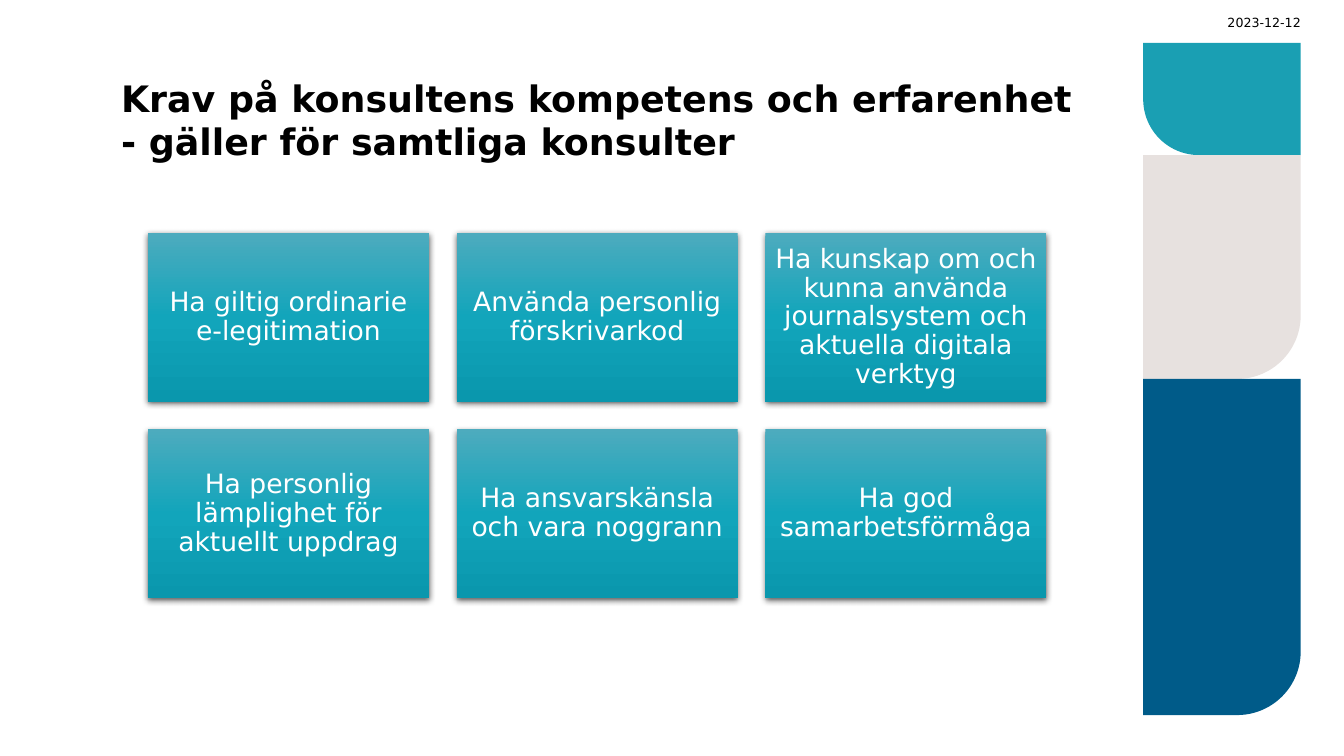
from math import cos, pi, sin

from pptx import Presentation
from pptx.dml.color import RGBColor
from pptx.enum.shapes import MSO_SHAPE
from pptx.enum.text import MSO_ANCHOR, MSO_AUTO_SIZE, PP_ALIGN
from pptx.oxml import parse_xml
from pptx.oxml.ns import nsdecls, qn
from pptx.util import Cm, Pt

FONT = "DejaVu Sans"
BLACK = RGBColor(0x00, 0x00, 0x00)
WHITE = RGBColor(0xFF, 0xFF, 0xFF)
TEAL = RGBColor(0x1A, 0x9F, 0xB3)
SAND = RGBColor(0xE7, 0xE1, 0xDF)
NAVY = RGBColor(0x00, 0x5B, 0x89)
GRADIENT = [
    (0, RGBColor(0x4D, 0xAB, 0xBE)),
    (50000, RGBColor(0x12, 0xA5, 0xBB)),
    (100000, RGBColor(0x0A, 0x97, 0xAD)),
]


def write(frame, text, size, color, align, anchor, inset=0):
    """Fill a text frame with one formatted paragraph."""
    frame.word_wrap = True
    frame.auto_size = MSO_AUTO_SIZE.NONE
    frame.vertical_anchor = anchor
    frame.margin_left = frame.margin_right = Cm(inset)
    frame.margin_top = frame.margin_bottom = Cm(inset)
    frame.text = text
    paragraph = frame.paragraphs[0]
    paragraph.alignment = align
    paragraph.font.name = FONT
    paragraph.font.size = Pt(size)
    paragraph.font.color.rgb = color
    return paragraph


prs = Presentation()
prs.slide_width, prs.slide_height = Cm(33.87), Cm(19.05)
slide = prs.slides.add_slide(prs.slide_layouts[5])
shapes = slide.shapes

# Side panels, each with one rounded bottom corner
panel_left, panel_right = 28.81, 32.78
panels = [
    (1.08, 3.91, 1.41, "left", TEAL),
    (3.91, 9.55, 1.6, "right", SAND),
    (9.55, 18.02, 1.6, "right", NAVY),
]
arc_steps = 24
for top, bottom, radius, rounded_side, color in panels:
    if rounded_side == "right":
        rounded, square, inward = panel_right, panel_left, -1
    else:
        rounded, square, inward = panel_left, panel_right, 1
    outline = [(square, bottom), (square, top), (rounded, top)]
    for step in range(arc_steps + 1):
        angle = pi / 2 * step / arc_steps
        outline.append((
            rounded + inward * radius * (1 - cos(angle)),
            bottom - radius * (1 - sin(angle)),
        ))
    points = [(Cm(x), Cm(y)) for x, y in outline]
    builder = shapes.build_freeform(*points[0])
    builder.add_line_segments(points[1:], close=True)
    panel = builder.convert_to_shape()
    panel.fill.solid()
    panel.fill.fore_color.rgb = color
    panel.line.fill.background()
    panel.shadow.inherit = False

# Title
title = shapes.title
title.left, title.top, title.width, title.height = Cm(3.05), Cm(1.19), Cm(24), Cm(2.92)
heading = write(
    title.text_frame,
    "Krav på konsultens kompetens och erfarenhet - gäller för samtliga konsulter",
    26, BLACK, PP_ALIGN.LEFT, MSO_ANCHOR.BOTTOM,
)
heading.font.bold = True

# Date
date = shapes.add_textbox(Cm(30.28), Cm(0.38), Cm(2.5), Cm(0.38))
write(date.text_frame, "2023-12-12", 9, BLACK, PP_ALIGN.RIGHT, MSO_ANCHOR.MIDDLE)

# Requirement cards in a grid of three columns
requirements = [
    "Ha giltig ordinarie e-legitimation",
    "Använda personlig förskrivarkod",
    "Ha kunskap om och kunna använda journalsystem och aktuella digitala verktyg",
    "Ha personlig lämplighet för aktuellt uppdrag",
    "Ha ansvarskänsla och vara noggrann",
    "Ha god samarbetsförmåga",
]
columns = 3
card_width, card_height, gap = 7.08, 4.25, 0.7
stops = "".join(
    f'<a:gs pos="{position}"><a:srgbClr val="{color}"/></a:gs>'
    for position, color in GRADIENT
)
for index, requirement in enumerate(requirements):
    row, column = divmod(index, columns)
    card = shapes.add_shape(
        MSO_SHAPE.RECTANGLE,
        Cm(3.73 + column * (card_width + gap)),
        Cm(5.87 + row * (card_height + gap)),
        Cm(card_width), Cm(card_height),
    )
    card.fill.background()
    card.line.fill.background()
    card.shadow.inherit = False
    properties = card._element.spPr
    # Three-stop gradient and soft shadow
    properties.replace(properties.find(qn("a:noFill")), parse_xml(
        f'<a:gradFill {nsdecls("a")} rotWithShape="1"><a:gsLst>{stops}</a:gsLst>'
        '<a:lin ang="5400000" scaled="0"/></a:gradFill>'
    ))
    properties.find(qn("a:effectLst")).append(parse_xml(
        f'<a:outerShdw {nsdecls("a")} blurRad="{Pt(4.5)}" dist="{Pt(1.5)}" '
        'dir="5400000" algn="ctr" rotWithShape="0"><a:srgbClr val="000000">'
        '<a:alpha val="63000"/></a:srgbClr></a:outerShdw>'
    ))
    label = write(card.text_frame, requirement, 19, WHITE,
                  PP_ALIGN.CENTER, MSO_ANCHOR.MIDDLE, inset=0.2)
    label.line_spacing = 0.9

prs.save("out.pptx")
